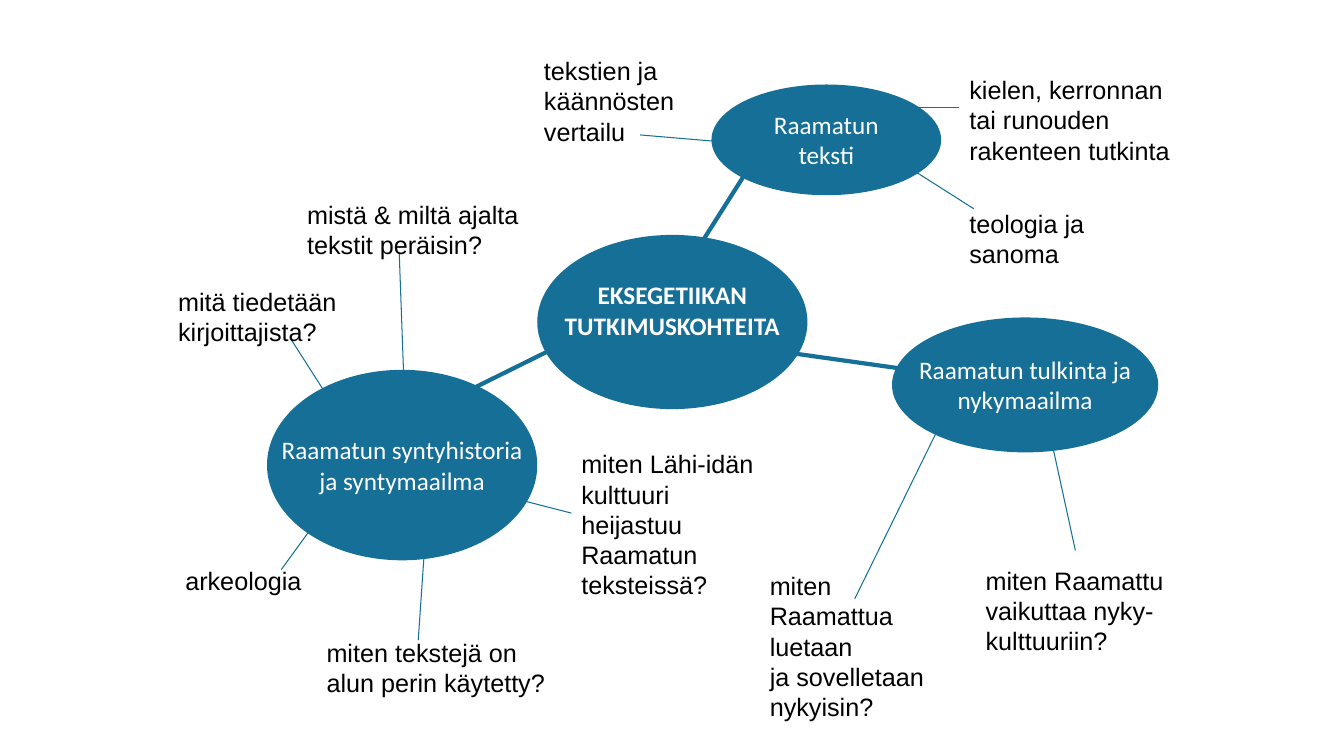
from lxml.etree import SubElement
from pptx import Presentation
from pptx.dml.color import RGBColor
from pptx.enum.shapes import MSO_CONNECTOR, MSO_SHAPE
from pptx.enum.text import MSO_ANCHOR, MSO_AUTO_SIZE, PP_ALIGN
from pptx.oxml.ns import qn
from pptx.util import Cm, Pt

TEAL = RGBColor(0x16, 0x6F, 0x96)
WHITE = RGBColor(0xFF, 0xFF, 0xFF)
BLACK = RGBColor(0, 0, 0)

HUB = (13.54, 5.92, 6.81, 4.39)
TITLE = ["EKSEGETIIKAN", "TUTKIMUSKOHTEITA"]
SPOKES = [
    (0.86, 2.64, -1.91, 4.01),
    (3.99, 0.43, 5.31, -1.65),
    (6.35, 2.97, 9.4, 3.4),
]

# Each topic: box, label, notes (x, y, width, rows, text), links (x1, y1, x2, y2)
TOPICS = [
    ((6.73, 9.32, 6.81, 4.8),
     ["Raamatun syntyhistoria", "ja syntymaailma"],
     [(0.76, -4.42, 6.07, 2, ["mistä & miltä ajalta", "tekstit peräisin?"]),
      (-2.49, -2.23, 4.6, 2, ["mitä tiedetään", "kirjoittajista?"]),
      (1.25, 6.61, 6.15, 2, ["miten tekstejä on alun perin käytetty?"]),
      (7.67, 1.86, 5.51, 5, ["miten Lähi-idän kulttuuri",
                             "heijastuu Raamatun teksteissä?"]),
      (-2.31, 4.8, 3.6, 1, ["arkeologia"])],
     [(3.46, 0.61, 3.33, -2.97),
      (6, 3.18, 7.67, 3.61),
      (1.73, 0.99, 0.61, -0.76),
      (1.32, 3.71, 0.36, 5.03),
      (3.99, 4.19, 3.81, 6.81)]),
    ((17.93, 2.13, 5.79, 2.79),
     ["Raamatun", "teksti"],
     [(-4.47, -0.86, 4.7, 3, ["tekstien ja käännösten", "vertailu"]),
      (6.25, -0.38, 5.59, 3, ["kielen, kerronnan tai runouden",
                              "rakenteen tutkinta"]),
      (6.25, 3, 4.67, 2, ["teologia ja", "sanoma"])],
     [(5.16, 0.59, 6.25, 0.59),
      (5.13, 2.19, 6.61, 3.13),
      (0.92, 1.5, -1.8, 1.27)]),
    ((22.48, 8, 6.71, 3.4),
     ["Raamatun tulkinta ja", "nykymaailma"],
     [(-3.33, 6.25, 5.33, 5, ["miten Raamattua luetaan", "ja sovelletaan",
                              "nykyisin?"]),
      (2.11, 6.12, 5.21, 3, ["miten Raamattu", "vaikuttaa nyky-",
                             "kulttuuriin?"])],
     [(4.01, 3.07, 4.62, 5.87),
      (1.14, 2.85, -0.94, 7.09)]),
]


def write(frame, lines, face, color, align, bold=False):
    """Fill a text frame with one paragraph per line."""
    frame.text = "\n".join(lines)
    for para in frame.paragraphs:
        para.alignment = align
        font = para.font
        font.name, font.size, font.bold = face, Pt(18), bold
        font.color.rgb = color


def link(slide, box, ends, width):
    """Draw a line whose ends are measured from the box corner."""
    x, y = box[:2]
    x1, y1, x2, y2 = ends
    line = slide.shapes.add_connector(
        MSO_CONNECTOR.STRAIGHT, Cm(x + x1), Cm(y + y1), Cm(x + x2), Cm(y + y2))
    line.line.color.rgb = TEAL
    line.line.width = Pt(width)
    SubElement(line._element.spPr, qn("a:effectLst"))


def note(slide, box, x, y, width, rows, lines):
    """Place a text note measured from the box corner."""
    text = slide.shapes.add_textbox(
        Cm(box[0] + x), Cm(box[1] + y), Cm(width), Cm(0.25 + 0.77 * rows))
    frame = text.text_frame
    frame.word_wrap = True
    frame.auto_size = MSO_AUTO_SIZE.SHAPE_TO_FIT_TEXT
    write(frame, lines, "Arial", BLACK, PP_ALIGN.LEFT)


def bubble(slide, box, lines, bold=False, lift=0):
    """Draw a labelled ellipse filling the box."""
    oval = slide.shapes.add_shape(MSO_SHAPE.OVAL, *map(Cm, box))
    oval.shadow.inherit = False
    oval.fill.solid()
    oval.fill.fore_color.rgb = TEAL
    oval.line.fill.background()
    frame = oval.text_frame
    frame.word_wrap = False
    frame.vertical_anchor = MSO_ANCHOR.MIDDLE
    frame.margin_bottom = Cm(0.13 + lift)
    write(frame, lines, "Calibri", WHITE, PP_ALIGN.CENTER, bold)


def topic(slide, box, label, notes, links):
    """Build a topic ellipse with its notes and thin links."""
    for ends in links:
        link(slide, box, ends, 0.75)
    for item in notes:
        note(slide, box, *item)
    bubble(slide, box, label)


def center(slide, box):
    """Build the hub ellipse and its thick spokes."""
    for ends in SPOKES:
        link(slide, box, ends, 3)
    bubble(slide, box, TITLE, bold=True, lift=0.6)


def main():
    """Build the mind map and save it."""
    deck = Presentation()
    deck.slide_width, deck.slide_height = Cm(33.87), Cm(19.05)
    slide = deck.slides.add_slide(deck.slide_layouts[6])
    center(slide, HUB)
    for item in TOPICS:
        topic(slide, *item)
    deck.save("out.pptx")


if __name__ == "__main__":
    main()
